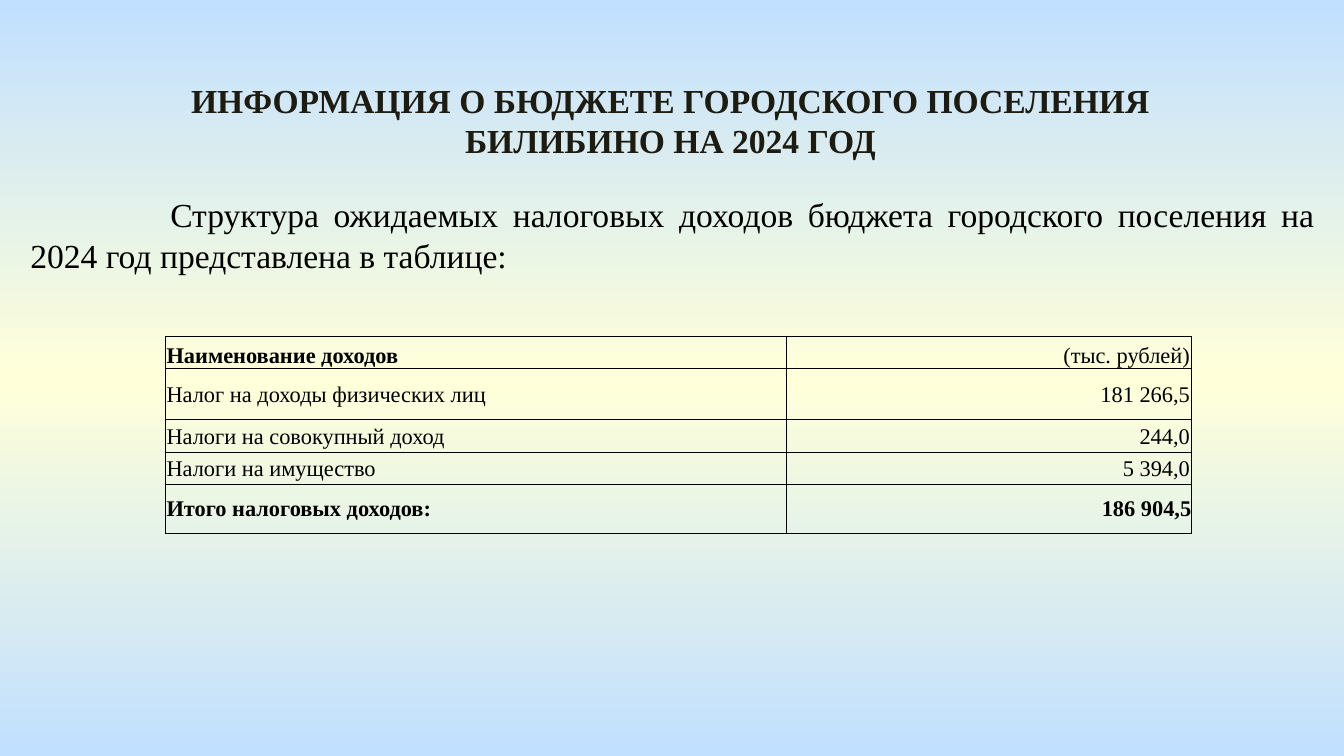
from copy import deepcopy
from dataclasses import dataclass

from lxml import etree
from pptx import Presentation
from pptx import util as u
from pptx.dml.color import RGBColor
from pptx.enum import text
from pptx.oxml import ns

PX = 9525  # EMU in one px, 96 px to the inch


@dataclass(frozen=True)
class Theme:
    font: str = "Times New Roman"
    sky: str = "C1E0FF"
    cream: str = "FFFFD9"
    heading: str = "1E1C11"
    ink: str = "000000"
    large: int = 18
    small: int = 12


theme = Theme()


def set_font(paragraph, size, color, bold=False):
    font = paragraph.font
    font.name, font.size, font.bold = theme.font, u.Pt(size), bold
    font.color.rgb = RGBColor.from_string(color)


def place(placeholder, left, top, width, height):
    placeholder.left, placeholder.top = left * PX, top * PX
    placeholder.width, placeholder.height = width * PX, height * PX
    frame = placeholder.text_frame
    frame.word_wrap = True
    frame.auto_size = text.MSO_AUTO_SIZE.SHAPE_TO_FIT_TEXT
    frame.vertical_anchor = text.MSO_ANCHOR.TOP


prs = Presentation()
prs.slide_width, prs.slide_height = 960 * PX, 540 * PX
slide = prs.slides.add_slide(prs.slide_layouts[1])

# Background: sky, cream, sky from top to bottom
background = slide.background.fill
background.gradient()
background.gradient_angle = 270
stop_list = slide.element.xpath(".//a:gsLst")[0]
stop_list.append(deepcopy(stop_list[-1]))
stops = [(0, theme.sky), (0.5, theme.cream), (1, theme.sky)]
for stop, (position, color) in zip(background.gradient_stops, stops):
    stop.position = position
    stop.color.rgb = RGBColor.from_string(color)

# Title
title = slide.shapes.title
place(title, 108, 52, 742, 68)
heading = title.text_frame.paragraphs[0]
heading.text = "ИНФОРМАЦИЯ О БЮДЖЕТЕ ГОРОДСКОГО ПОСЕЛЕНИЯ БИЛИБИНО НА 2024 ГОД"
heading.alignment = text.PP_ALIGN.CENTER
set_font(heading, theme.large, theme.heading, bold=True)

# Introduction with a first-line indent and no bullet
intro = slide.placeholders[1]
place(intro, 12, 134, 937, 68)
sentence = intro.text_frame.paragraphs[0]
sentence.text = (
    "Структура ожидаемых налоговых доходов бюджета городского поселения "
    "на 2024 год представлена в таблице:"
)
sentence.alignment = text.PP_ALIGN.JUSTIFY
sentence.space_before = u.Pt(0)
set_font(sentence, theme.large, theme.ink)
properties = sentence._p.get_or_add_pPr()
properties.set("marL", "0")
properties.set("indent", str(100 * PX))
etree.SubElement(properties, ns.qn("a:buNone"))
# The bullet setting comes before the default run properties
properties.append(properties.find(ns.qn("a:defRPr")))

# Tax revenue table
revenues = [
    ("Наименование доходов", "(тыс. рублей)", 23),
    ("Налог на доходы физических лиц", "181 266,5", 37),
    ("Налоги на совокупный доход", "244,0", 23),
    ("Налоги на имущество", "5 394,0", 23),
    ("Итого налоговых доходов:", "186\u00a0904,5".replace("\u00a0", " "), 35),
]
column_widths = [444, 289]
table = slide.shapes.add_table(
    len(revenues), 2, 118 * PX, 240 * PX,
    sum(column_widths) * PX, sum(row[-1] for row in revenues) * PX,
).table
table.first_row = table.horz_banding = False
for column, width in zip(table.columns, column_widths):
    column.width = width * PX

last = len(revenues) - 1
for r, (*entries, height) in enumerate(revenues):
    table.rows[r].height = height * PX
    for c, entry in enumerate(entries):
        cell = table.cell(r, c)
        inset = 0 if (r, c) == (last, 1) else PX
        cell.margin_left = cell.margin_right = cell.margin_top = inset
        cell.margin_bottom = 0
        cell.vertical_anchor = text.MSO_ANCHOR.BOTTOM if r == 0 else text.MSO_ANCHOR.MIDDLE
        label = cell.text_frame.paragraphs[0]
        label.text = entry
        label.alignment = text.PP_ALIGN.RIGHT if c else text.PP_ALIGN.JUSTIFY
        set_font(label, theme.small, theme.ink, bold=r == last or (r, c) == (0, 0))

        # Thin border on all four sides, no fill
        cell_properties = cell._tc.get_or_add_tcPr()
        for side in ("lnL", "lnR", "lnT", "lnB"):
            line = etree.SubElement(cell_properties, ns.qn(f"a:{side}"), w=str(u.Pt(0.5)))
            solid = etree.SubElement(line, ns.qn("a:solidFill"))
            etree.SubElement(solid, ns.qn("a:srgbClr"), val=theme.ink)
        cell.fill.background()

prs.save("out.pptx")
